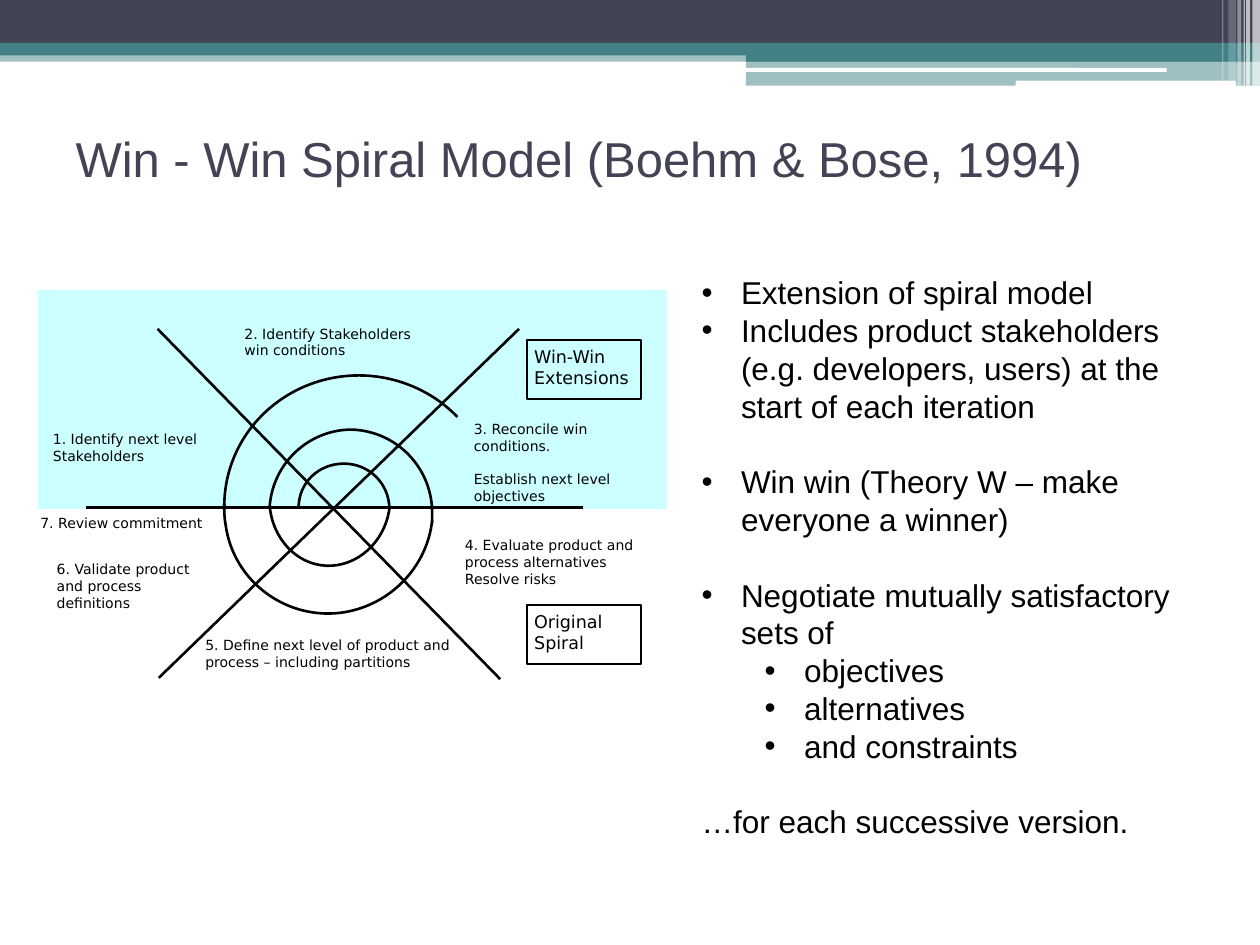
import pptx
import pptx.util
import pptx.dml.color
import pptx.enum.shapes
import pptx.enum.text
from lxml import etree

Pt = pptx.util.Pt
tag = pptx.oxml.ns.qn
Kind = pptx.enum.shapes.MSO_SHAPE
Anchor = pptx.enum.text.MSO_ANCHOR
Left = pptx.enum.text.PP_ALIGN.LEFT

deck = pptx.Presentation()
deck.slide_width = pptx.util.Inches(10)
deck.slide_height = pptx.util.Inches(7.5)
cell = deck.slide_width / 100  # the grid has 100 columns and 75 rows


def grid(*nums):
    """Turn grid columns and rows into lengths."""
    return [round(n * cell) for n in nums]


def paint(part, color):
    """Set a fill, line or font to a solid hex colour."""
    if hasattr(part, "solid"):
        part.solid()
        part.fore_color.rgb = pptx.dml.color.RGBColor.from_string(color)
    else:
        part.color.rgb = pptx.dml.color.RGBColor.from_string(color)


slide = deck.slides.add_slide(deck.slide_layouts[5])
shapes = slide.shapes

# Bands and stripes at the top, then the tinted upper half of the diagram
bands = [
    (0, 4, 100, 0.9, "438086", 50),
    (0, 0, 100, 3.4, "424456", 100),
    (0, 3.4, 100, 1, "438086", 100),
    (59.2, 3.9, 40.8, 1, "438086", 100),
    (59.2, 4.8, 40.8, 2, "438086", 50),
    (59.1, 5.4, 33.5, 0.3, "FFFFFF", 100),
    (80.6, 6.4, 17.5, 0.45, "FFFFFF", 100),
    (99.4, 0, 0.6, 6.8, "FFFFFF", 65),
    (98.9, 0, 0.3, 6.8, "FFFFFF", 65),
    (98.7, 0, 0.1, 6.8, "FFFFFF", 60),
    (98.2, 0, 0.3, 6.8, "FFFFFF", 40),
    (97.5, 0, 0.6, 6.4, "FFFFFF", 20),
    (97, 0, 0.1, 6.4, "FFFFFF", 30),
    (3, 23, 49.9, 17.4, "CCFFFF", 100),
]
for x, y, w, h, color, share in bands:
    thin = h < 0.5
    band = shapes.add_shape(
        Kind.ROUNDED_RECTANGLE if thin else Kind.RECTANGLE, *grid(x, y, w, h))
    band.shadow.inherit = False
    band.line.fill.background()
    paint(band.fill, color)
    if share < 100:
        tint = band._element.spPr.find(".//" + tag("a:srgbClr"))
        etree.SubElement(tint, tag("a:alpha"), val=str(share * 1000))

title = shapes.title
title.left, title.top, title.width, title.height = grid(5, 6.7, 90, 11.7)
title.text_frame.text = "Win - Win Spiral Model (Boehm & Bose, 1994)"
title.text_frame.vertical_anchor = Anchor.MIDDLE
head = title.text_frame.paragraphs[0]
head.alignment = Left
head.font.size = Pt(28)
head.font.name = "Arial"
paint(head.font, "424456")

# Axes that part the sectors
for ends in [(39.7, 53.9, 12.5, 26.1), (12.6, 53.8, 41.2, 26.1),
             (46.3, 40.3, 6.8, 40.3)]:
    axis = shapes.add_connector(
        pptx.enum.shapes.MSO_CONNECTOR.STRAIGHT, *grid(*ends))
    paint(axis.line, "000000")
    axis.line.width = Pt(1.5)
    etree.SubElement(axis._element.spPr, tag("a:effectLst"))

# Turns of the spiral, inside out: a start, then two controls and an end per curve
turns = [
    [(23.7, 40.3), (23.7, 38.3), (25.3, 36.8), (27.3, 36.8),
     (29.3, 36.8), (30.9, 38.4), (30.9, 40.4)],
    [(21.4, 40.1), (21.6, 42.7), (23.5, 44.8), (25.9, 44.9),
     (28.3, 45), (30.5, 43.1), (30.9, 40.4)],
    [(34.3, 41.5), (34.3, 41.3), (34.3, 41.1), (34.3, 40.9),
     (34.4, 37.2), (31.5, 34.2), (27.9, 34.1),
     (24.5, 34.1), (21.6, 36.8), (21.4, 40.3)],
    [(34.3, 41.3), (33.9, 45), (31, 48), (27.3, 48.6),
     (22.8, 49.3), (18.5, 46.2), (17.9, 41.6),
     (17.8, 41.1), (17.8, 40.6), (17.8, 40)],
    [(36.3, 33.1), (34.3, 31), (31.4, 29.8), (28.5, 29.8),
     (22.6, 29.8), (17.8, 34.4), (17.8, 40.2)],
]
for turn in turns:
    pen = shapes.build_freeform(*grid(*turn[0]))
    pen.add_line_segments([grid(*dot) for dot in turn[1:]], close=False)
    curve = pen.convert_to_shape()
    curve.shadow.inherit = False
    curve.fill.background()
    paint(curve.line, "000000")
    curve.line.width = Pt(1.5)
    # Join each three straight steps into one Bezier curve
    trail = curve._element.spPr.find(".//" + tag("a:path"))
    legs = trail.findall(tag("a:lnTo"))
    for i in range(0, len(legs), 3):
        bend = etree.SubElement(trail, tag("a:cubicBezTo"))
        for leg in legs[i:i + 3]:
            bend.append(leg[0])
            trail.remove(leg)

# Sector labels, and the two framed captions
labels = [
    (4, 34.1, 13.4, 3.3, False, ["1. Identify next level Stakeholders"]),
    (3, 40.7, 14.1, 2.3, False, ["7. Review commitment"]),
    (4.3, 44.4, 11.5, 4.7, False, ["6. Validate product and process definitions"]),
    (16.1, 50.4, 20, 4.6, False,
     ["5. Define next level of product and process – including partitions"]),
    (36.7, 42.5, 16.7, 4.9, False,
     ["4. Evaluate product and process alternatives", "Resolve risks"]),
    (37.4, 33.3, 13.9, 4.2, False,
     ["3. Reconcile win conditions.", "Establish next level objectives"]),
    (19.2, 25.7, 15.4, 3.2, False, ["2. Identify Stakeholders win conditions"]),
    (41.8, 27, 9.1, 4.7, True, ["Win-Win Extensions"]),
    (41.8, 48, 9.1, 4.7, True, ["Original Spiral"]),
]
for x, y, w, h, framed, lines in labels:
    if framed:
        label = shapes.add_shape(Kind.RECTANGLE, *grid(x, y, w, h))
        label.shadow.inherit = False
        label.fill.background()
        paint(label.line, "000000")
        label.line.width = Pt(1)
    else:
        label = shapes.add_textbox(*grid(x, y, w, h))
    frame = label.text_frame
    frame.word_wrap = True
    frame.vertical_anchor = Anchor.TOP
    frame.margin_left, frame.margin_top = grid(*((0.6, 0.5) if framed else (0.2, 0.1)))
    frame.margin_right, frame.margin_bottom = frame.margin_left, frame.margin_top
    frame.text = "\n".join(lines)
    for para in frame.paragraphs:
        para.alignment = Left
        para.font.size = Pt(10 if framed else 8)
        para.font.name = "DejaVu Sans"
        paint(para.font, "000000")
        if para.text.startswith("Establish"):
            para.space_before = Pt(9.4)

# Points on the right: text, indent level (None for no bullet), gap before
points = [
    ("Extension of spiral model", 0, False),
    ("Includes product stakeholders (e.g. developers, users) at the start"
     " of each iteration", 0, False),
    ("Win win (Theory W – make everyone a winner)", 0, True),
    ("Negotiate mutually satisfactory sets of", 0, True),
    ("objectives", 1, False),
    ("alternatives", 1, False),
    ("and constraints", 1, False),
    ("…for each successive version.", None, True),
]
frame = shapes.add_textbox(*grid(54.7, 21.2, 43.3, 46.4)).text_frame
frame.word_wrap = True
frame.text = "\n".join(text for text, level, gap in points)
for para, (text, level, gap) in zip(frame.paragraphs, points):
    if level is not None:
        para.level = level
        props = para._p.get_or_add_pPr()
        inset, hang = grid(3.13 + 5 * level, -3.13)
        props.set("marL", str(inset))
        props.set("indent", str(hang))
        etree.SubElement(props, tag("a:buFont"), typeface="Arial")
        etree.SubElement(props, tag("a:buChar"), char="•")
    if gap:
        para.space_before = Pt(21.6)
    para.font.size = Pt(18)
    para.font.name = "Arial"
    paint(para.font, "000000")

deck.save("out.pptx")
